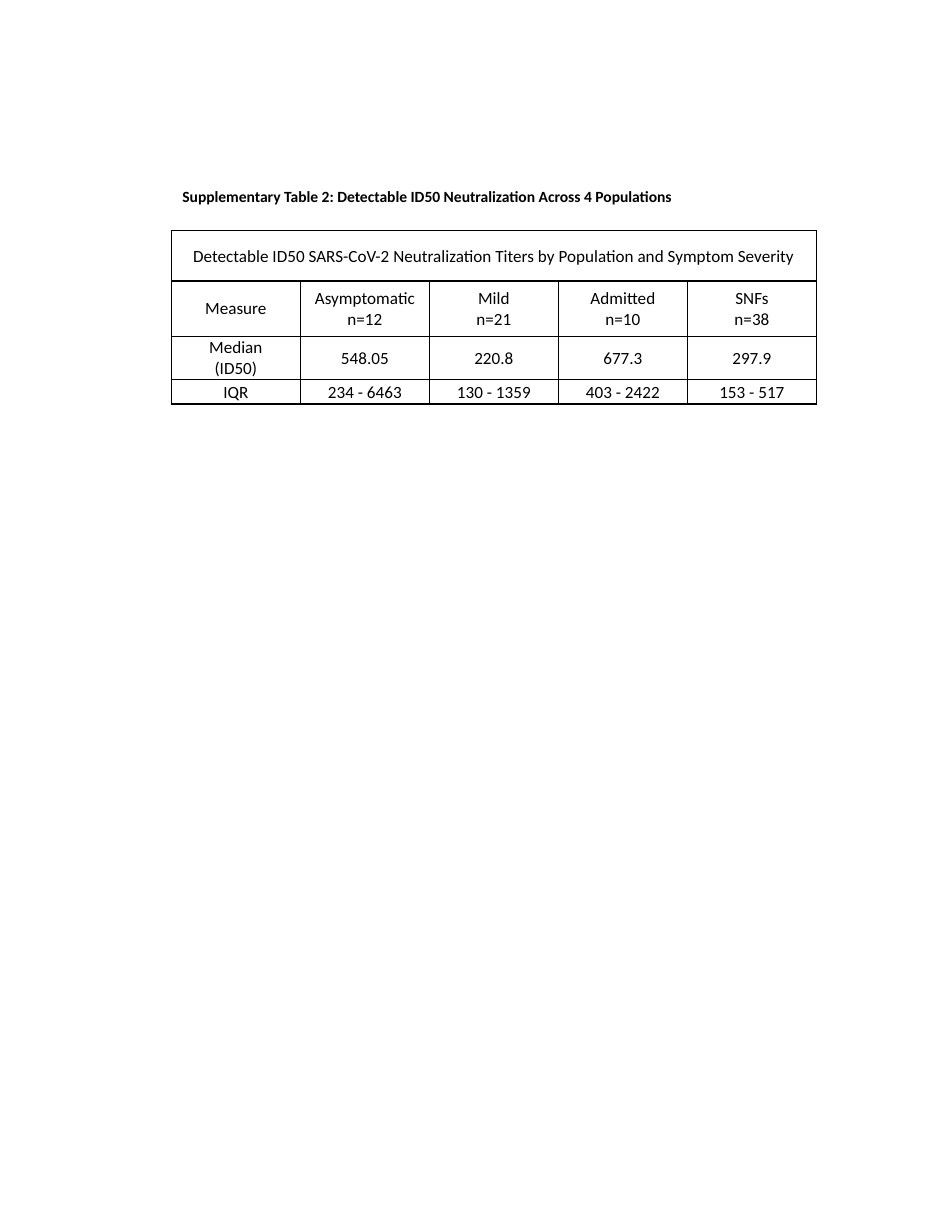
"""Build a one-page supplementary table of neutralization titers."""
from dataclasses import dataclass

from lxml.etree import fromstring
from pptx import Presentation
from pptx.dml.color import RGBColor
from pptx.enum.text import MSO_ANCHOR, MSO_AUTO_SIZE, PP_ALIGN
from pptx.util import Inches, Pt


@dataclass(frozen=True)
class Theme:
    font: str = "Calibri"
    ink: str = "000000"
    caption: float = 10
    body: float = 11
    thin: float = 0.5
    thick: float = 1


theme = Theme()


def add_span(para, text, size, bold=False):
    span = para.add_run()
    span.text = text
    span.font.name = theme.font
    span.font.size = Pt(size)
    span.font.bold = bold
    span.font.color.rgb = RGBColor.from_string(theme.ink)


def add_border(cell, index, side, thick):
    width = Pt(theme.thick if thick else theme.thin)
    cell._tc.get_or_add_tcPr().insert(index, fromstring(
        f'<a:{side} xmlns:a="http://schemas.openxmlformats.org/drawingml/2006/main" w="{width}">'
        f'<a:solidFill><a:srgbClr val="{theme.ink}"/></a:solidFill>'
        f'<a:prstDash val="solid"/></a:{side}>'))


deck = Presentation()
deck.slide_width, deck.slide_height = Inches(8.5), Inches(11)
page = deck.slides.add_slide(deck.slide_layouts[6])

rows = [
    [["Detectable ID50 SARS-CoV-2 Neutralization Titers by Population and Symptom Severity"],
     [], [], [], []],
    [["Measure"], ["Asymptomatic\nn=12"], ["Mild\nn=21"], ["Admitted\nn=10"], ["SNFs\nn=38"]],
    [["Median", "(ID50)"], ["548.05"], ["220.8"], ["677.3"], ["297.9"]],
    [["IQR"], ["234 - 6463"], ["130 - 1359"], ["403 - 2422"], ["153 - 517"]],
]
heights = [0.45, 0.49, 0.38, 0.22]
last_row, last_column = len(rows) - 1, len(rows[0]) - 1

table = page.shapes.add_table(len(rows), len(rows[0]), Inches(1.53), Inches(2.06),
                              Inches(5.76), Inches(sum(heights))).table
table.first_row = table.horz_banding = False
for table_row, height in zip(table.rows, heights):
    table_row.height = Inches(height)

for row, contents in enumerate(rows):
    for column, paragraphs in enumerate(contents):
        cell = table.cell(row, column)
        cell.fill.background()
        cell.vertical_anchor = MSO_ANCHOR.MIDDLE
        cell.margin_left = cell.margin_right = cell.margin_top = Inches(0.01)
        cell.margin_bottom = 0
        borders = {
            "lnL": column <= 1,
            "lnR": column in (0, last_column),
            "lnT": row <= 1,
            "lnB": row in (0, last_row),
        }
        for index, (side, thick) in enumerate(borders.items()):
            add_border(cell, index, side, thick or row == 0)
        for number, text in enumerate(paragraphs):
            frame = cell.text_frame
            para = frame.add_paragraph() if number else frame.paragraphs[0]
            para.alignment = PP_ALIGN.CENTER
            for position, line in enumerate(text.split("\n")):
                if position:
                    para.add_line_break()
                add_span(para, line, theme.body)
table.cell(0, 0).merge(table.cell(0, last_column))

box = page.shapes.add_textbox(Inches(1.53), Inches(1.62), Inches(5.45), Inches(0.27))
box.text_frame.word_wrap = True
box.text_frame.auto_size = MSO_AUTO_SIZE.SHAPE_TO_FIT_TEXT
add_span(box.text_frame.paragraphs[0],
         "Supplementary Table 2: Detectable ID50 Neutralization Across 4 Populations",
         theme.caption, bold=True)

deck.save("out.pptx")
